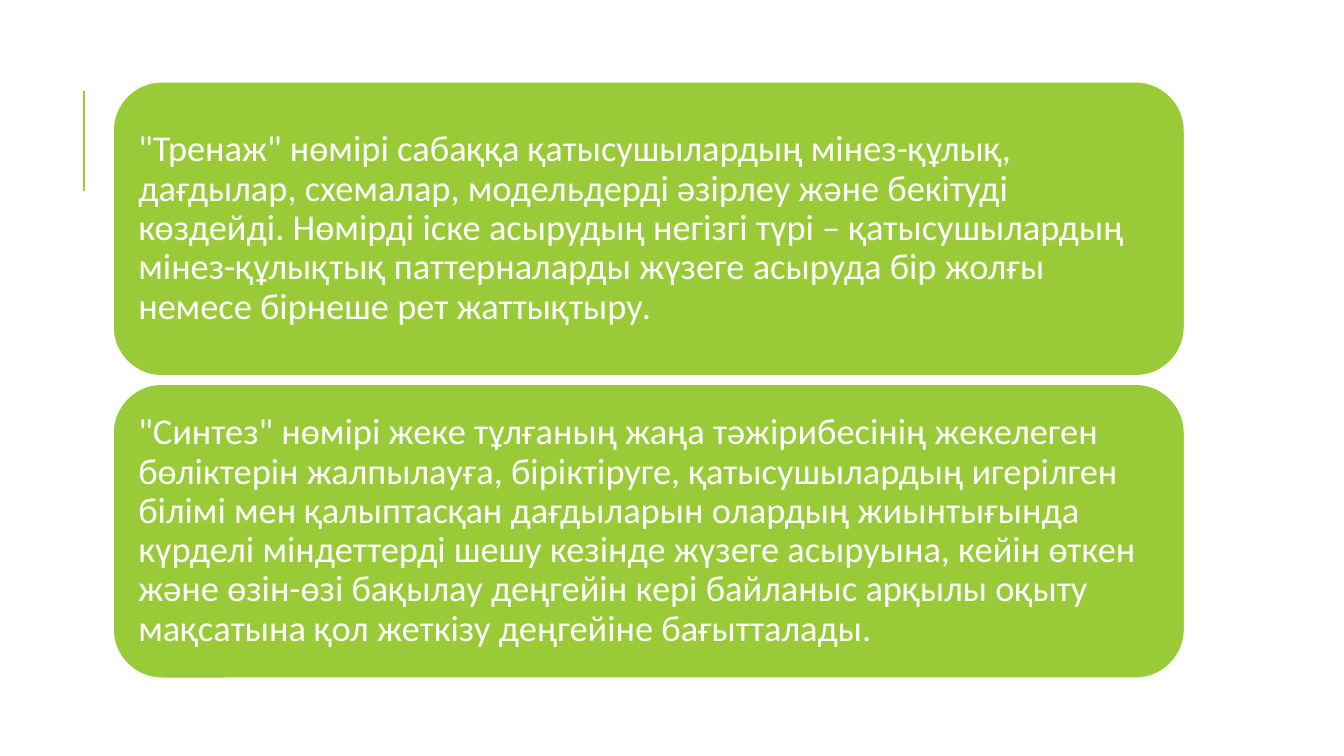
from dataclasses import dataclass

from lxml import etree
from pptx import Presentation
from pptx.dml.color import RGBColor
from pptx.enum.shapes import MSO_CONNECTOR as CONN, MSO_SHAPE as SHAPE
from pptx.enum.text import MSO_ANCHOR as ANCHOR, PP_ALIGN as ALIGN
from pptx.oxml.ns import qn
from pptx.util import Inches, Pt

CARDS = [
    '"Тренаж" нөмірі сабаққа қатысушылардың мінез-құлық, дағдылар, схемалар, '
    'модельдерді әзірлеу және бекітуді көздейді. Нөмірді іске асырудың негізгі '
    'түрі – қатысушылардың мінез-құлықтық паттерналарды жүзеге асыруда бір жолғы '
    'немесе бірнеше рет жаттықтыру.',
    '"Синтез" нөмірі жеке тұлғаның жаңа тәжірибесінің жекелеген бөліктерін '
    'жалпылауға, біріктіруге, қатысушылардың игерілген білімі мен қалыптасқан '
    'дағдыларын олардың жиынтығында күрделі міндеттерді шешу кезінде жүзеге '
    'асыруына, кейін өткен және өзін-өзі бақылау деңгейін кері байланыс арқылы '
    'оқыту мақсатына қол жеткізу деңгейіне бағытталады.',
]


@dataclass(frozen=True)
class Theme:
    green: RGBColor = RGBColor(0x99, 0xCB, 0x38)
    white: RGBColor = RGBColor(0xFF, 0xFF, 0xFF)
    font: str = "Calibri"
    body: Pt = Pt(26)
    rule: Pt = Pt(1.5)
    outline: Pt = Pt(1.25)


THEME = Theme()
SLIDE_W, SLIDE_H = 13.33, 7.5
LEFT, TOP = 1.12, 0.81
CARD_W, CARD_H, GAP = 10.63, 2.92, 0.08
INSET = 0.11
RULE_X, RULE_TOP, RULE_H = SLIDE_W / 16, 0.12 * SLIDE_H, 1


def add_rule(slide):
    x, top = Inches(RULE_X), Inches(RULE_TOP)
    rule = slide.shapes.add_connector(CONN.STRAIGHT, x, top + Inches(RULE_H), x, top)
    rule.line.color.rgb = THEME.green
    rule.line.width = THEME.rule
    etree.SubElement(rule._element.spPr, qn("a:effectLst"))


def add_card(slide, row, text):
    top = TOP + row * (CARD_H + GAP)
    sp = slide.shapes.add_shape(SHAPE.ROUNDED_RECTANGLE, Inches(LEFT), Inches(top),
                                Inches(CARD_W), Inches(CARD_H))
    sp.shadow.inherit = False
    sp.fill.solid()
    sp.fill.fore_color.rgb = THEME.green
    sp.line.color.rgb = THEME.white
    sp.line.width = THEME.outline

    tf = sp.text_frame
    tf.word_wrap = True
    tf.vertical_anchor = ANCHOR.MIDDLE
    tf.margin_left = tf.margin_right = tf.margin_top = tf.margin_bottom = Inches(INSET)
    p = tf.paragraphs[0]
    p.alignment = ALIGN.LEFT
    p.line_spacing = 0.9
    r = p.add_run()
    r.text = text
    r.font.name = THEME.font
    r.font.size = THEME.body
    r.font.color.rgb = THEME.white


def main():
    prs = Presentation()
    prs.slide_width, prs.slide_height = Inches(SLIDE_W), Inches(SLIDE_H)
    s = prs.slides.add_slide(prs.slide_layouts[6])
    add_rule(s)
    for row, text in enumerate(CARDS):
        add_card(s, row, text)
    prs.save("out.pptx")


if __name__ == "__main__":
    main()
